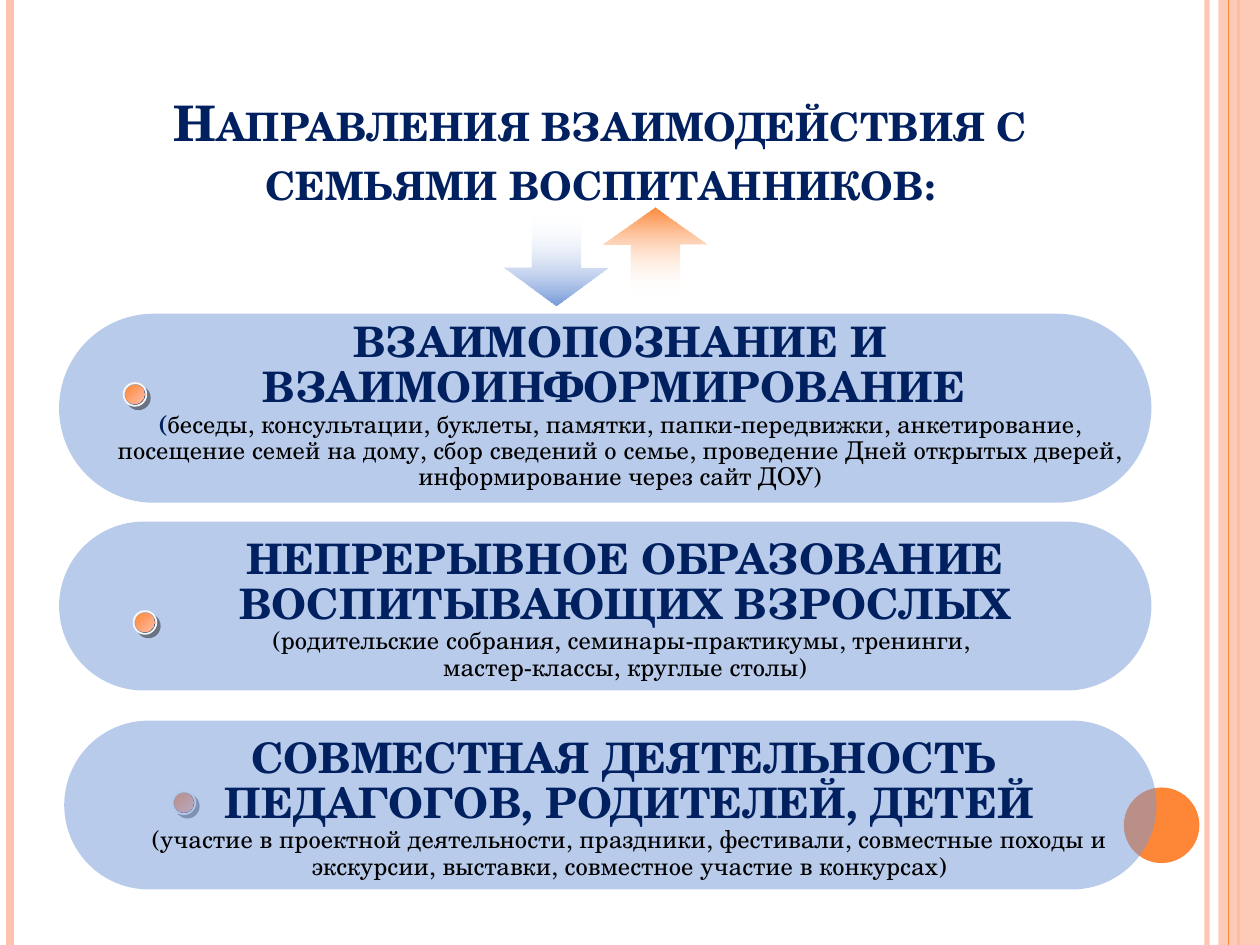
from lxml.etree import SubElement
from pptx import Presentation
from pptx.dml.color import RGBColor
from pptx.enum.shapes import MSO_CONNECTOR, MSO_SHAPE
from pptx.enum.text import MSO_ANCHOR, MSO_AUTO_SIZE, PP_ALIGN
from pptx.oxml.ns import qn
from pptx.util import Pt

FONT = "TeX Gyre Schola"
NAVY, BLACK, WHITE = "002060", "000000", "FFFFFF"
ORANGE, PEACH, BLUE = "FE8637", "FEC3AE", "7598D9"

RAILS = [(689.8, PEACH, 3, 93), (5.8, PEACH, 4.5, 100),
         (707.8, ORANGE, 1.5, 100), (702, ORANGE, 0.75, 100)]

HEAD, BODY = (24, NAVY, True), (14, BLACK, False)
ROWS = [
    ((33.8, 179.3, 624.2, 108), (56.2, 180, 596.2, 105.1), [
        [("ВЗАИМОПОЗНАНИЕ И ВЗАИМОИНФОРМИРОВАНИЕ ", HEAD)],
        [("(", (14, NAVY, True)),
         ("беседы, консультации, буклеты, памятки, папки-передвижки, "
          "анкетирование, посещение семей на дому, сбор сведений о семье, "
          "проведение Дней открытых дверей, информирование через сайт ДОУ)",
          BODY)]]),
    ((33.8, 298.1, 624.2, 96.5), (95.8, 303.8, 522.7, 90), [
        [("НЕПРЕРЫВНОЕ ОБРАЗОВАНИЕ ВОСПИТЫВАЮЩИХ ВЗРОСЛЫХ", HEAD)],
        [("(родительские собрания, семинары-практикумы, тренинги, ", BODY)],
        [("мастер-классы, круглые столы)", BODY)]]),
    ((36.7, 411.8, 624.2, 96.5), (78.5, 417.6, 562.3, 90), [
        [("СОВМЕСТНАЯ ДЕЯТЕЛЬНОСТЬ ", HEAD)],
        [("ПЕДАГОГОВ, РОДИТЕЛЕЙ, ДЕТЕЙ", HEAD)],
        [("(участие в проектной деятельности, праздники, фестивали, "
          "совместные походы и экскурсии, выставки, совместное участие "
          "в конкурсах)", BODY)]]),
]


def paint(color, code):
    """Set a colour from a hex string."""
    color.rgb = RGBColor.from_string(code)


def fade(node, share):
    """Give the first colour under a node an opacity in percent."""
    tone = next(node.iter(qn("a:srgbClr")))
    SubElement(tone, qn("a:alpha")).set("val", str(share * 1000))


def add_form(shapes, kind, box, code=None, share=100):
    """Add a preset shape without line or shadow, plain filled if asked."""
    form = shapes.add_shape(kind, *map(Pt, box))
    form.shadow.inherit = False
    form.line.fill.background()
    if code:
        form.fill.solid()
        paint(form.fill.fore_color, code)
        if share < 100:
            fade(form._element.spPr, share)
    return form


def blend(form, codes, angle):
    """Fill a shape with a linear gradient of two colours."""
    form.fill.gradient()
    form.fill.gradient_angle = angle
    for stop, code in zip(form.fill.gradient_stops, codes):
        paint(stop.color, code)


def add_rail(shapes, x, code, width, share):
    """Add a vertical line over the full slide height."""
    rail = shapes.add_connector(MSO_CONNECTOR.STRAIGHT, Pt(x), 0, Pt(x), Pt(540))
    rail.line.width = Pt(width)
    paint(rail.line.color, code)
    if share < 100:
        fade(rail._element.spPr, share)
    SubElement(rail._element.spPr, qn("a:effectLst"))


def add_arrow(shapes, kind, box, code, angle):
    """Add a block arrow whose tail fades out."""
    arrow = add_form(shapes, kind, box)
    arrow.adjustments[0], arrow.adjustments[1] = 0.465, 0.421
    blend(arrow, (WHITE, code), angle)
    fade(arrow._element.spPr, 0)


def add_dot(shapes, left, top):
    """Add a grouped bead: a shaded ring with an orange core."""
    group = shapes.add_group_shape().shapes
    ring = add_form(group, MSO_SHAPE.OVAL, (left, top, 13, 13))
    blend(ring, ("DDDDE1", "223864"), 315)
    ring.line.width = Pt(1)
    paint(ring.line.color, "F8F8F8")
    effects = ring._element.spPr.find(qn("a:effectLst"))
    shade = SubElement(effects, qn("a:outerShdw"), dist=str(Pt(2.8)),
                       dir="2700000", algn="ctr", rotWithShape="0")
    SubElement(shade, qn("a:srgbClr"), val="1C1C1C")
    fade(shade, 50)
    core = add_form(group, MSO_SHAPE.OVAL, (left + 1.1, top + 1.1, 10.8, 10.8))
    blend(core, (ORANGE, "FEBEA8"), 315)


def add_run(para, text, size, code, bold):
    """Add one formatted run to a paragraph."""
    run = para.add_run()
    run.text = text
    run.font.name, run.font.size, run.font.bold = FONT, Pt(size), bold
    paint(run.font.color, code)
    return run


def set_title(title):
    """Place the title and write it in small capitals."""
    title.left, title.top, title.width, title.height = map(
        Pt, (61.9, 33.8, 562.3, 90))
    frame = title.text_frame
    frame.auto_size = MSO_AUTO_SIZE.NONE
    frame.word_wrap = True
    frame.vertical_anchor = MSO_ANCHOR.BOTTOM
    para = frame.paragraphs[0]
    para.alignment = PP_ALIGN.CENTER
    run = add_run(para, "Направления взаимодействия с семьями воспитанников:",
                  28, NAVY, True)
    run.font._element.set("cap", "small")


def add_row(shapes, pill, box, paras):
    """Add a translucent pill with its text box."""
    form = add_form(shapes, MSO_SHAPE.ROUNDED_RECTANGLE, pill, BLUE, 50)
    form.adjustments[0] = 0.5
    frame = shapes.add_textbox(*map(Pt, box)).text_frame
    frame.word_wrap = True
    frame.auto_size = MSO_AUTO_SIZE.SHAPE_TO_FIT_TEXT
    for index, runs in enumerate(paras):
        para = frame.add_paragraph() if index else frame.paragraphs[0]
        para.alignment, para.line_spacing = PP_ALIGN.CENTER, 0.9
        for text, style in runs:
            add_run(para, text, *style)


def main():
    """Build the slide and save it."""
    deck = Presentation()
    deck.slide_width, deck.slide_height = Pt(720), Pt(540)
    shapes = deck.slides.add_slide(deck.slide_layouts[5]).shapes
    set_title(shapes.title)
    for rail in RAILS[:3]:
        add_rail(shapes, *rail)
    add_form(shapes, MSO_SHAPE.RECTANGLE, (696.2, 0, 23.8, 540), PEACH, 87)
    add_rail(shapes, *RAILS[3])
    add_form(shapes, MSO_SHAPE.OVAL, (642.2, 450, 43.2, 43.2), ORANGE)
    add_arrow(shapes, MSO_SHAPE.DOWN_ARROW, (288, 122.8, 59.8, 51.8), BLUE, 270)
    add_arrow(shapes, MSO_SHAPE.UP_ARROW, (344.5, 118.4, 59.8, 50.4), ORANGE, 90)
    add_dot(shapes, 98.6, 452.2)
    for row in ROWS:
        add_row(shapes, *row)
    add_dot(shapes, 76.3, 349.2)
    add_dot(shapes, 70.6, 218.9)
    deck.save("out.pptx")


if __name__ == "__main__":
    main()
